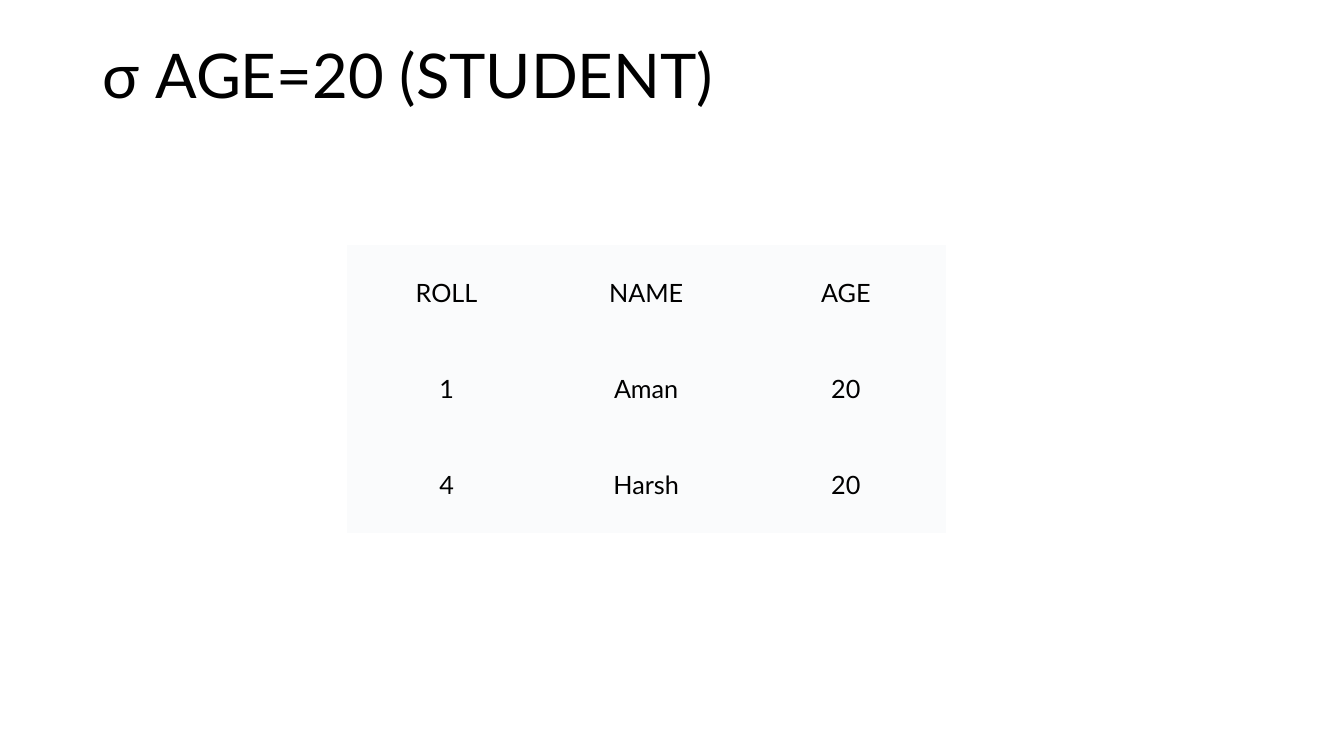
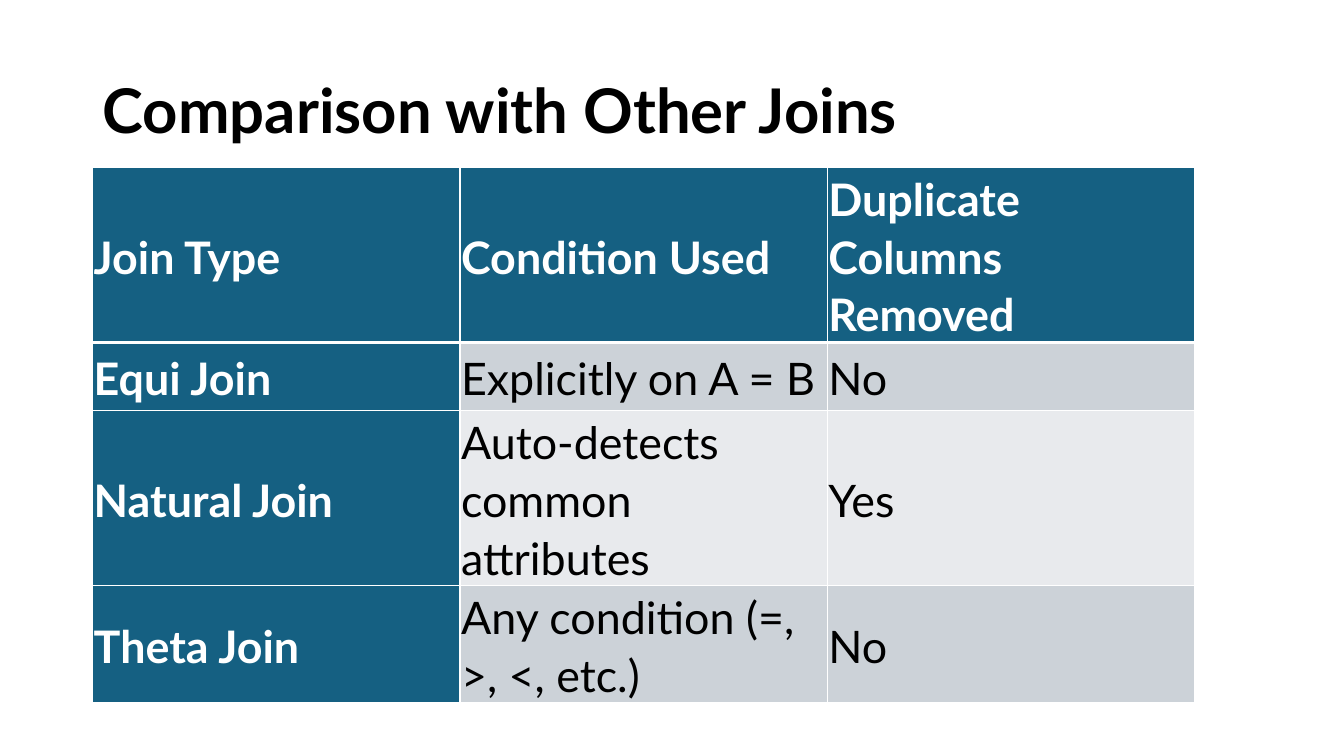
from dataclasses import dataclass
from lxml.etree import SubElement
from pptx import Presentation
from pptx.dml.color import RGBColor
from pptx.enum.text import MSO_ANCHOR, MSO_AUTO_SIZE, PP_ALIGN
from pptx.oxml.ns import qn
from pptx.util import Inches, Pt


@dataclass(frozen=True)
class Theme:
    font: str = "Lato"
    ink: str = "000000"
    white: str = "FFFFFF"
    pale: str = "FAFBFC"
    blue: str = "156082"
    bands: tuple = ("CCD2D8", "E8EAED")
    title_size: int = 44
    table_size: int = 18
    large_size: int = 32
    thin: int = 1
    thick: int = 3


PLAIN_STYLE = "{2D5ABB26-0587-4C30-8999-92F81FD0307C}"
TITLE_BOX = (6.9, 5.33, 86.25, 19.33)


def assign(obj, values):
    for name, value in values.items():
        setattr(obj, name, value)


class Deck:
    def __init__(self, theme):
        self.theme = theme
        self.prs = Presentation()
        assign(self.prs, {"slide_width": Inches(13.33), "slide_height": Inches(7.5)})

    def x(self, percent):
        return round(self.prs.slide_width * percent / 100)

    def y(self, percent):
        return round(self.prs.slide_height * percent / 100)

    def add_slide(self):
        self.s = self.prs.slides.add_slide(self.prs.slide_layouts[5])

    def add_text(self, p, text, size, color, bold=False, **layout):
        assign(p, layout)
        r = p.add_run()
        r.text = text
        assign(r.font, {"name": self.theme.font, "size": Pt(size), "bold": bold})
        r.font.color.rgb = RGBColor.from_string(color)

    def title(self, text, bold=False, anchor=MSO_ANCHOR.MIDDLE):
        sp = self.s.shapes.title
        left, top, width, height = TITLE_BOX
        assign(sp, {"left": self.x(left), "top": self.y(top),
                    "width": self.x(width), "height": self.y(height)})
        tf = sp.text_frame
        assign(tf, {"auto_size": MSO_AUTO_SIZE.NONE, "word_wrap": True,
                    "vertical_anchor": anchor})
        self.add_text(tf.paragraphs[0], text, self.theme.title_size, self.theme.ink,
                      bold, alignment=PP_ALIGN.LEFT, line_spacing=0.9)

    def table(self, rows, left, top, width, heights):
        frame = self.s.shapes.add_table(len(rows), len(rows[0]), self.x(left), self.y(top),
                                        self.x(width), self.y(sum(heights)))
        tbl = frame.table
        tbl.horz_banding = False
        tbl._tbl.tblPr.find(qn("a:tableStyleId")).text = PLAIN_STYLE
        for row, height in zip(tbl.rows, heights):
            row.height = self.y(height)
        for i, texts in enumerate(rows):
            for j, text in enumerate(texts):
                cell = tbl.cell(i, j)
                cell.vertical_anchor = MSO_ANCHOR.MIDDLE
                yield i, j, cell, text

    def fill(self, cell, color):
        cell.fill.solid()
        cell.fill.fore_color.rgb = RGBColor.from_string(color)

    def borders(self, cell, **widths):
        for side in "LRTB":
            ln = SubElement(cell._tc.get_or_add_tcPr(), qn(f"a:ln{side}"),
                            w=str(int(Pt(widths.get(side, self.theme.thin)))))
            SubElement(SubElement(ln, qn("a:solidFill")), qn("a:srgbClr"),
                       val=self.theme.white)

    def plain_table(self, rows, left, top, width, row_height):
        t = self.theme
        for _, _, cell, text in self.table(rows, left, top, width, [row_height] * len(rows)):
            self.fill(cell, t.pale)
            self.add_text(cell.text_frame.paragraphs[0], text, t.table_size, t.ink,
                          alignment=PP_ALIGN.CENTER)

    def banded_table(self, rows, left, top, width, heights):
        t = self.theme
        margins = {f"margin_{side}": Inches(0.01)
                   for side in ("left", "right", "top", "bottom")}
        rules = {0: {"B": t.thick}, 1: {"T": t.thick}}
        for i, j, cell, text in self.table(rows, left, top, width, heights):
            heading = i == 0 or j == 0
            assign(cell, margins)
            self.borders(cell, **rules.get(i, {}))
            self.fill(cell, t.blue if heading else t.bands[(i - 1) % 2])
            self.add_text(cell.text_frame.paragraphs[0], text, t.large_size,
                          t.white if heading else t.ink, heading,
                          line_spacing=1.07, space_after=Pt(8))


def main():
    deck = Deck(Theme())

    deck.add_slide()
    deck.title("σ AGE=20 (STUDENT)", anchor=MSO_ANCHOR.TOP)
    students = [("ROLL", "NAME", "AGE"), ("1", "Aman", "20"), ("4", "Harsh", "20")]
    deck.plain_table(students, 25.8, 32.4, 44.56, 12.7)

    deck.add_slide()
    deck.title("Comparison with Other Joins", bold=True)
    joins = [
        ("Join Type", "Condition Used", "Duplicate Columns Removed"),
        ("Equi Join", "Explicitly on A = B", "No"),
        ("Natural Join", "Auto-detects common attributes", "Yes"),
        ("Theta Join", "Any condition (=, >, <, etc.)", "No"),
    ]
    line_counts = (3, 1, 3, 2)
    deck.banded_table(joins, 6.9, 22.13, 82, [max(9, 7.7 * n) for n in line_counts])

    deck.prs.save("out.pptx")


if __name__ == "__main__":
    main()
